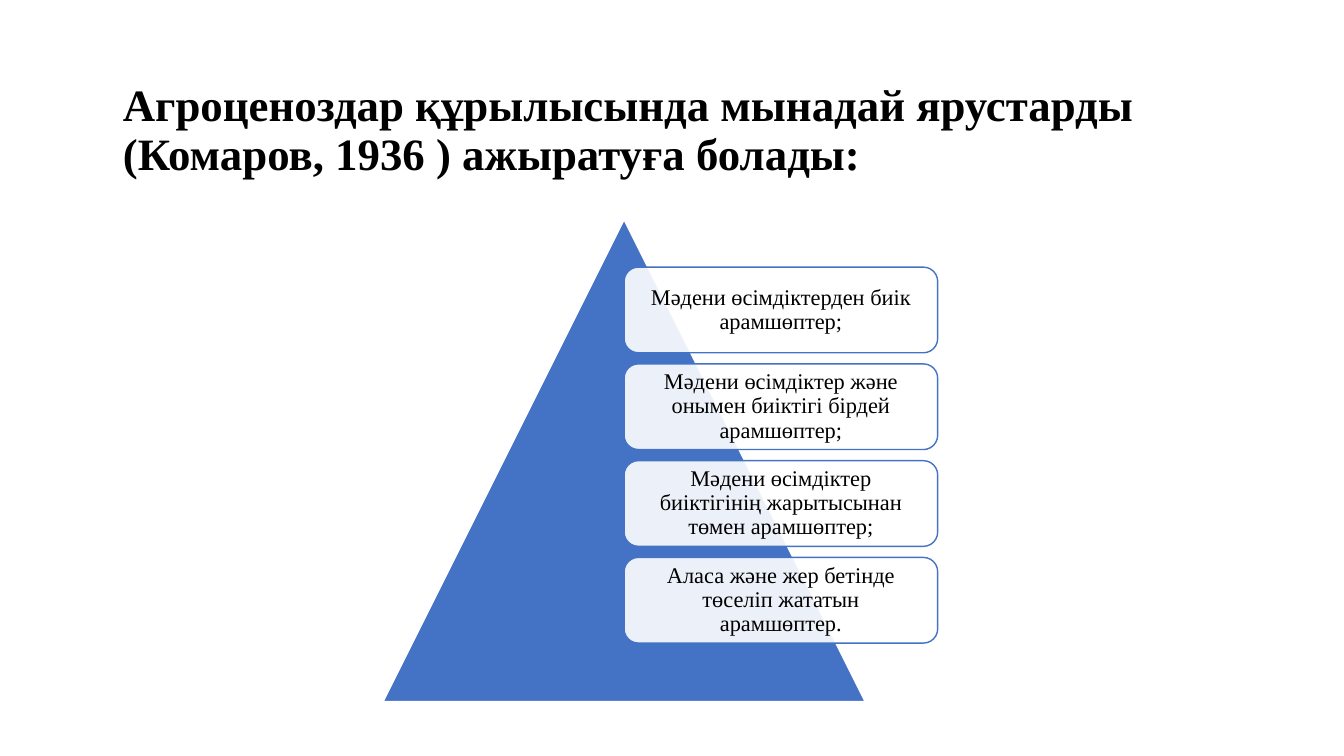
import pptx
import pptx.dml.color
import pptx.enum.shapes
import pptx.enum.text
import pptx.oxml.ns
import pptx.util
from lxml import etree

FONT = "Times New Roman"
HUES = {"blue": "4472C4", "white": "FFFFFF", "black": "000000"}
KINDS = pptx.enum.shapes.MSO_SHAPE
ALIGN = pptx.enum.text.PP_ALIGN
TIERS = [
    "Мәдени өсімдіктерден биік арамшөптер;",
    "Мәдени өсімдіктер және онымен биіктігі бірдей арамшөптер;",
    "Мәдени өсімдіктер биіктігінің жарытысынан төмен арамшөптер;",
    "Аласа және жер бетінде төселіп жататын арамшөптер.",
]


def px(num):
    return pptx.util.Emu(num * 9144)


def hue(name):
    return pptx.dml.color.RGBColor.from_string(HUES[name])


def write(shape, text, size=16, bold=False, align=ALIGN.CENTER, pad=(11, 11)):
    frame = shape.text_frame
    frame.word_wrap = True
    frame.vertical_anchor = pptx.enum.text.MSO_ANCHOR.MIDDLE
    frame.margin_left = frame.margin_right = px(pad[0])
    frame.margin_top = frame.margin_bottom = px(pad[1])
    para = frame.paragraphs[0]
    para.alignment = align
    para.line_spacing = 0.9
    run = para.add_run()
    run.text = text
    run.font.name = FONT
    run.font.size = pptx.util.Pt(size)
    run.font.bold = bold
    run.font.color.rgb = hue("black")


class Deck:
    """Hold the style and the current slide."""

    def __init__(self):
        self.show = pptx.Presentation()
        self.show.slide_width, self.show.slide_height = px(1333), px(750)
        self.slide = self.show.slides.add_slide(self.show.slide_layouts[6])

    def shape(self, kind, box, fill, line, alpha=None):
        item = self.slide.shapes.add_shape(kind, *map(px, box))
        item.shadow.inherit = False
        item.fill.solid()
        item.fill.fore_color.rgb = hue(fill)
        item.line.color.rgb = hue(line)
        item.line.width = pptx.util.Pt(1)
        if alpha is not None:
            qn = pptx.oxml.ns.qn
            tint = item.fill._xPr.find(qn("a:solidFill")).find(qn("a:srgbClr"))
            etree.SubElement(tint, qn("a:alpha")).set("val", str(alpha * 1000))
        return item

    def title(self, text, box):
        item = self.slide.shapes.add_textbox(*map(px, box))
        write(item, text, size=32, bold=True, align=ALIGN.LEFT, pad=(10, 5))

    def tier(self, text, box):
        card = self.shape(KINDS.ROUNDED_RECTANGLE, box, "white", "blue", alpha=90)
        write(card, text)


def main():
    deck = Deck()
    deck.shape(KINDS.ISOSCELES_TRIANGLE, (380, 218, 478, 478), "blue", "white")
    high = 85
    step = high * 9 // 8
    for row, text in enumerate(TIERS):
        deck.tier(text, (619, 265 + row * (step + 1), 311, high))
    deck.title(
        "Агроценоздар құрылысында мынадай ярустарды (Комаров, 1936 ) ажыратуға болады:",
        (112, 62, 1199, 137),
    )
    deck.show.save("out.pptx")


if __name__ == "__main__":
    main()
